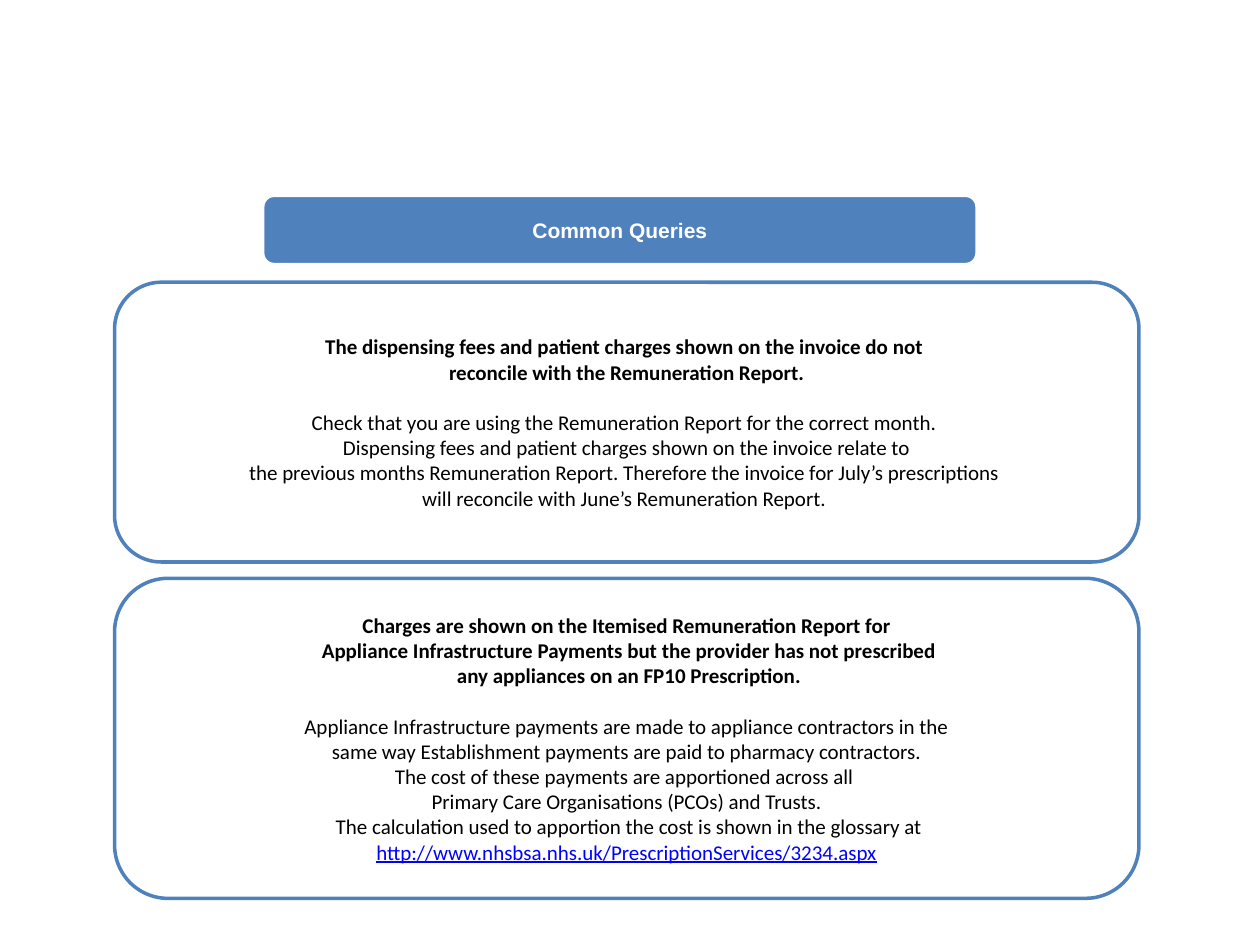
from pptx import Presentation, util as u
from pptx.dml.color import RGBColor
from pptx.enum import shapes, text

BLUE = RGBColor(0x4F, 0x81, 0xBD)
WHITE = RGBColor(0xFF, 0xFF, 0xFF)
BLACK = RGBColor(0, 0, 0)
LINK = RGBColor(0, 0, 0xFF)
WIDTH, HEIGHT = 10, 7.5
PANEL_LEFT, PANEL_WIDTH = 0.91, 8.13
SIZE, GAP = 12, 14.4

QUERIES = [
    (2.24, 2.22,
     ["The dispensing fees and patient charges shown on the invoice do not ",
      "reconcile with the Remuneration Report."],
     ["Check that you are using the Remuneration Report for the correct month. ",
      "Dispensing fees and patient charges shown on the invoice relate to",
      "the previous months Remuneration Report. Therefore the invoice for July’s prescriptions ",
      "will reconcile with June’s Remuneration Report. "]),
    (4.59, 2.54,
     ["Charges are shown on the Itemised Remuneration Report for",
      " Appliance Infrastructure Payments but the provider has not prescribed",
      " any appliances on an FP10 Prescription."],
     ["Appliance Infrastructure payments are made to appliance contractors in the",
      " same way Establishment payments are paid to pharmacy contractors. ",
      "The cost of these payments are apportioned across all ",
      "Primary Care Organisations (PCOs) and Trusts.",
      " The calculation used to apportion the cost is shown in the glossary at",
      "http://www.nhsbsa.nhs.uk/PrescriptionServices/3234.aspx"]),
]


def add_box(s, kind, left, top, width, height, fill, line):
    """Add a filled and outlined shape without a shadow."""
    sp = s.shapes.add_shape(kind, *map(u.Inches, (left, top, width, height)))
    sp.shadow.inherit = False
    sp.fill.solid()
    sp.fill.fore_color.rgb = fill
    sp.line.color.rgb = line
    sp.line.width = u.Pt(2)
    return sp


def add_run(p, words, font, color, bold=False):
    """Add one formatted run to a centred paragraph."""
    p.alignment = text.PP_ALIGN.CENTER
    r = p.add_run()
    r.text = words
    r.font.name, r.font.size, r.font.bold = font, u.Pt(SIZE), bold
    r.font.color.rgb = color
    return r


def add_heading(s, words):
    """Place the slide title in front of a blue rounded bar."""
    width, height = 5.67, 0.55
    left, top = (WIDTH - width) / 2 - 0.08, 1.55
    bar = add_box(s, shapes.MSO_SHAPE.ROUNDED_RECTANGLE, left, top, width, height, BLUE, WHITE)
    sp = s.shapes.title
    sp.element.addprevious(bar.element)
    sp.left, sp.top, sp.width, sp.height = map(u.Inches, (left, top, width, height))
    tf = sp.text_frame
    tf.auto_size = text.MSO_AUTO_SIZE.NONE
    tf.vertical_anchor = text.MSO_ANCHOR.MIDDLE
    add_run(tf.paragraphs[0], words, "Arial", WHITE, True)


def add_query(s, top, height, question, answer):
    """Add a panel with a bold question above its answer."""
    sp = add_box(s, shapes.MSO_SHAPE.FLOWCHART_ALTERNATE_PROCESS,
                 PANEL_LEFT, top, PANEL_WIDTH, height, WHITE, BLUE)
    tf = sp.text_frame
    tf.word_wrap = False
    tf.vertical_anchor = text.MSO_ANCHOR.MIDDLE
    for i, words in enumerate(question + answer):
        p = tf.add_paragraph() if i else tf.paragraphs[0]
        if i == len(question):
            p.space_before = u.Pt(GAP)
        is_link = words.startswith("http")
        r = add_run(p, words, "Calibri", LINK if is_link else BLACK, i < len(question))
        r.font.underline = is_link


def main():
    """Build and save the slide."""
    prs = Presentation()
    prs.slide_width, prs.slide_height = u.Inches(WIDTH), u.Inches(HEIGHT)
    s = prs.slides.add_slide(prs.slide_layouts[5])
    add_heading(s, "Common Queries")
    for query in QUERIES:
        add_query(s, *query)
    prs.save("out.pptx")


if __name__ == "__main__":
    main()
